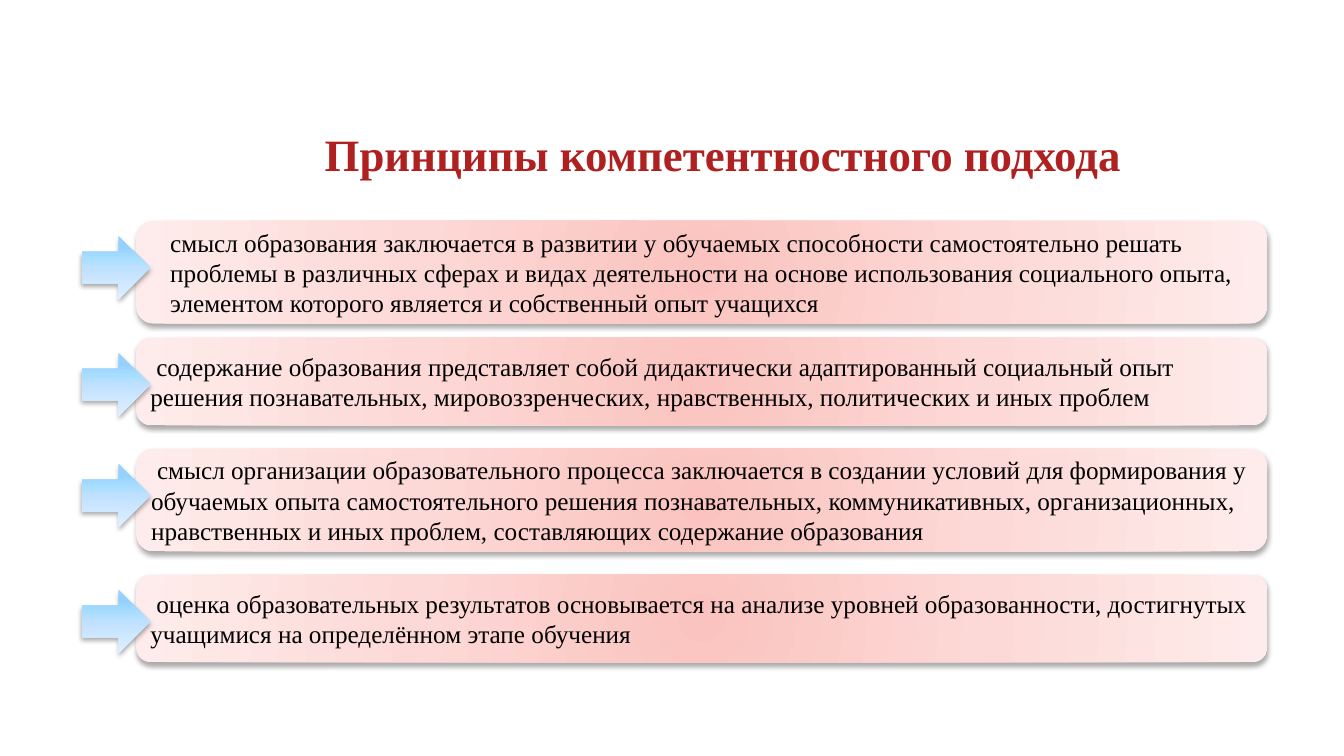
import pptx
import pptx.dml.color
import pptx.enum.shapes
import pptx.enum.text
import pptx.oxml
import pptx.oxml.ns
import pptx.util

Inches = pptx.util.Inches
Pt = pptx.util.Pt
RGB = pptx.dml.color.RGBColor
Shape = pptx.enum.shapes.MSO_SHAPE
Align = pptx.enum.text.PP_ALIGN
Anchor = pptx.enum.text.MSO_ANCHOR
qn = pptx.oxml.ns.qn

RED = RGB(0xAF, 0x21, 0x21)
BLACK = RGB(0, 0, 0)
PINKS = [(0, RGB(0xFB, 0xC3, 0xBF)), (50, RGB(0xFC, 0xD9, 0xD6)),
         (100, RGB(0xFD, 0xEC, 0xEB))]
BLUES = [(18, RGB(0x96, 0xD0, 0xFF)), (36, RGB(0xA7, 0xDE, 0xFF)),
         (50, RGB(0xBF, 0xE1, 0xFF)), (100, RGB(0xE0, 0xEF, 0xFF))]
ROUND = ('<a:path path="circle"><a:fillToRect l="50000" t="50000" '
         'r="50000" b="50000"/></a:path>')
DOWN = '<a:lin ang="5400000" scaled="0"/>'
SPACE = 'xmlns:a="http://schemas.openxmlformats.org/drawingml/2006/main"'

TITLE = "Принципы компетентностного подхода"
ROWS = [
    (2.19, 1.02, 0.19, 0, [
        "смысл образования заключается в развитии у обучаемых способности "
        "самостоятельно решать",
        "проблемы в различных сферах и видах деятельности на основе "
        "использования социального опыта,",
        "элементом которого является и собственный опыт учащихся"]),
    (3.35, 0.87, 0, 0.06, [
        "содержание образования представляет собой дидактически "
        "адаптированный социальный опыт решения познавательных, "
        "мировоззренческих, нравственных, политических и иных проблем"]),
    (4.45, 1.02, 0, 0.06, [
        "смысл организации образовательного процесса заключается в создании "
        "условий для формирования у обучаемых опыта самостоятельного решения "
        "познавательных, коммуникативных, организационных, нравственных и "
        "иных проблем, составляющих содержание образования"]),
    (5.7, 0.87, 0, 0.06, [
        "оценка образовательных результатов основывается на анализе уровней "
        "образованности, достигнутых учащимися на определённом этапе обучения"]),
]


def write(frame, lines, font, size=18, color=BLACK, bold=False,
          align=Align.LEFT, left=0, first=0):
    frame.word_wrap = True
    frame.vertical_anchor = Anchor.MIDDLE
    for i, line in enumerate(lines):
        para = frame.paragraphs[0] if i == 0 else frame.add_paragraph()
        para.alignment = align
        props = para._p.get_or_add_pPr()
        props.set("marL", str(Inches(left)))
        props.set("indent", str(Inches(first)))
        run = para.add_run()
        run.text = line
        run.font.name = font
        run.font.size = Pt(size)
        run.font.bold = bold
        run.font.color.rgb = color


class Deck:
    font = "Times New Roman"

    def __init__(self):
        self.show = pptx.Presentation()
        self.show.slide_width = Inches(13.33)
        self.show.slide_height = Inches(7.5)
        self.slide = self.show.slides.add_slide(self.show.slide_layouts[6])

    def title(self, text, *area):
        box = self.slide.shapes.add_textbox(*map(Inches, area))
        write(box.text_frame, [text], self.font, size=32, color=RED,
              bold=True, align=Align.CENTER)

    def shape(self, kind, area, stops, flow):
        item = self.slide.shapes.add_shape(kind, *map(Inches, area))
        item.line.fill.background()
        item.shadow.inherit = False
        props = item._element.spPr
        marks = "".join(
            f'<a:gs pos="{pos * 1000}"><a:srgbClr val="{color}"/></a:gs>'
            for pos, color in stops)
        props.insert(2, pptx.oxml.parse_xml(
            f'<a:gradFill {SPACE} rotWithShape="1"><a:gsLst>{marks}</a:gsLst>'
            f'{flow}</a:gradFill>'))
        props.find(qn("a:effectLst")).append(pptx.oxml.parse_xml(
            f'<a:outerShdw {SPACE} blurRad="{Pt(3.5)}" dist="{Pt(2.2)}" '
            'dir="5400000" rotWithShape="0"><a:srgbClr val="000000">'
            '<a:alpha val="32000"/></a:srgbClr></a:outerShdw>'))
        return item

    def panel(self, top, height, left, first, lines):
        item = self.shape(Shape.ROUNDED_RECTANGLE, (1.35, top, 11.22, height),
                          PINKS, ROUND)
        write(item.text_frame, lines, self.font, left=left, first=first)

    def arrow(self, top):
        self.shape(Shape.RIGHT_ARROW, (0.81, top, 0.68, 0.63), BLUES, DOWN)


def main():
    deck = Deck()
    deck.title(TITLE, 2.84, 1.09, 8.66, 0.86)
    for top, height, left, first, lines in ROWS:
        deck.panel(top, height, left, first, lines)
        deck.arrow(top + 0.15)
    deck.show.save("out.pptx")


if __name__ == "__main__":
    main()
